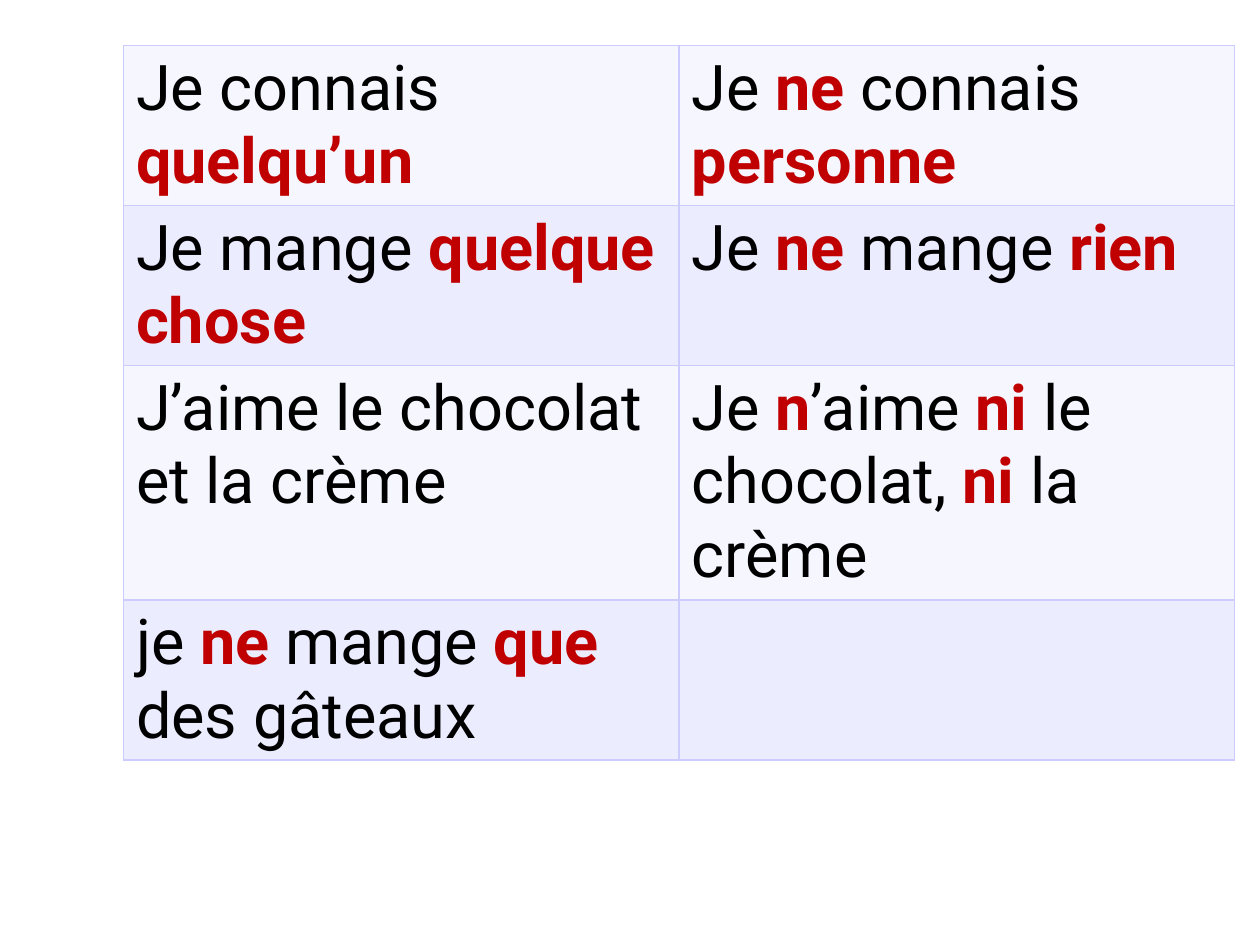
"""Build a slide with a table of French affirmative and negative sentences."""
from lxml import etree
from pptx import Presentation
from pptx.dml.color import RGBColor
from pptx.oxml.ns import qn
from pptx.util import Inches, Pt

BLACK = RGBColor(0x00, 0x00, 0x00)
RED = RGBColor(0xC0, 0x00, 0x00)
BAND_FILLS = (RGBColor(0xF6, 0xF6, 0xFF), RGBColor(0xEC, 0xEC, 0xFF))
BORDER = RGBColor(0xCC, 0xCC, 0xFF)
BORDER_SIDES = ("a:lnL", "a:lnR", "a:lnT", "a:lnB")
BLANK_LAYOUT = 6

# Words between asterisks are emphasised.
SENTENCES = [
    ("Je connais *quelqu’un*", "Je *ne *connais *personne*"),
    ("Je mange *quelque chose*", "Je *ne *mange *rien*"),
    ("J’aime le chocolat et la crème", "Je *n*’aime *ni *le chocolat, *ni *la crème"),
    ("je *ne *mange *que *des gâteaux", ""),
]
ROW_HEIGHTS = (1.27, 1.27, 1.86, 1.27)
COLUMN_WIDTH = 4.41
LEFT, TOP = 0.98, 0.36


def write_sentence(cell, sentence):
    paragraph = cell.text_frame.paragraphs[0]
    for position, words in enumerate(sentence.split("*")):
        if not words:
            continue
        emphasised = position % 2 == 1
        run = paragraph.add_run()
        run.text = words
        font_format = {"name": "Roboto", "size": Pt(36), "bold": emphasised}
        for attribute, value in font_format.items():
            setattr(run.font, attribute, value)
        run.font.color.rgb = RED if emphasised else BLACK


def draw_borders(cell):
    properties = cell._tc.get_or_add_tcPr()
    for index, side in enumerate(BORDER_SIDES):
        line = etree.Element(qn(side), w=str(Pt(1)))
        fill = etree.SubElement(line, qn("a:solidFill"))
        etree.SubElement(fill, qn("a:srgbClr"), val=str(BORDER))
        properties.insert(index, line)


def main():
    presentation = Presentation()
    presentation.slide_width = Inches(10)
    presentation.slide_height = Inches(7.5)
    slide = presentation.slides.add_slide(presentation.slide_layouts[BLANK_LAYOUT])
    column_count = len(SENTENCES[0])
    table = slide.shapes.add_table(
        len(SENTENCES), column_count, Inches(LEFT), Inches(TOP),
        Inches(COLUMN_WIDTH * column_count), Inches(sum(ROW_HEIGHTS)),
    ).table
    table.first_row = False
    for row_index, (sentences, height) in enumerate(zip(SENTENCES, ROW_HEIGHTS)):
        table.rows[row_index].height = Inches(height)
        for column_index, sentence in enumerate(sentences):
            cell = table.cell(row_index, column_index)
            cell.fill.solid()
            cell.fill.fore_color.rgb = BAND_FILLS[row_index % 2]
            draw_borders(cell)
            write_sentence(cell, sentence)
    presentation.save("out.pptx")


if __name__ == "__main__":
    main()
